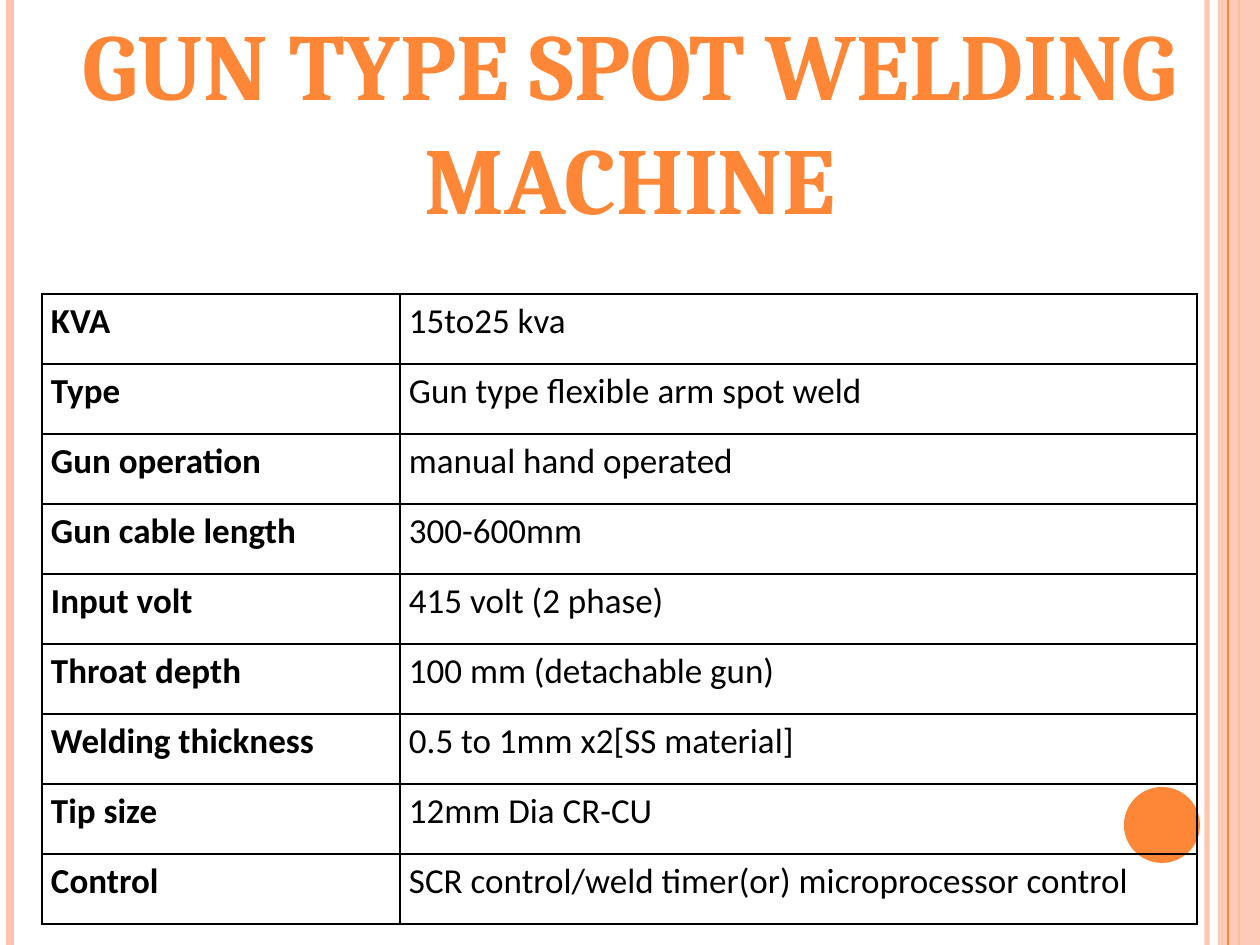
from dataclasses import dataclass

from lxml import etree
from pptx import Presentation
from pptx import util as u
from pptx.dml.color import RGBColor
from pptx.enum import shapes, text
from pptx.oxml import ns

PX = 914400 / 126


@dataclass(frozen=True)
class Theme:
    orange: str = "FE8637"
    peach: str = "FEC3AE"
    black: str = "000000"
    title_font: str = "Cambria"
    title_size: int = 54
    table_font: str = "Calibri"
    table_size: int = 20


theme = Theme()


def px(length):
    return u.Emu(round(length * PX))


def set_alpha(fill_parent, percent):
    """Make the solid colour inside an element partly transparent."""
    color = fill_parent.find(".//" + ns.qn("a:srgbClr"))
    etree.SubElement(color, ns.qn("a:alpha"), val=str(percent * 1000))


deck = Presentation()
deck.slide_width, deck.slide_height = px(1260), px(945)
page = deck.slides.add_slide(deck.slide_layouts[6])

# Vertical stripes and the band on the right edge, from back to front
stripes = [
    (1207, theme.peach, 3, 93),
    (10, theme.peach, 4.5, 100),
    (1239, theme.orange, 1.5, 100),
    ("band", theme.peach, 0, 87),
    (1228, theme.orange, 0.75, 100),
]
for x, color, width, opacity in stripes:
    if x == "band":
        band = page.shapes.add_shape(
            shapes.MSO_SHAPE.RECTANGLE, px(1218), 0, px(42), px(945))
        band.shadow.inherit = False
        band.fill.solid()
        band.fill.fore_color.rgb = RGBColor.from_string(color)
        band.line.fill.background()
        set_alpha(band._element.spPr, opacity)
        continue
    stripe = page.shapes.add_connector(
        shapes.MSO_CONNECTOR.STRAIGHT, px(x), 0, px(x), px(945))
    stripe.line.color.rgb = RGBColor.from_string(color)
    stripe.line.width = u.Pt(width)
    etree.SubElement(stripe._element.spPr, ns.qn("a:effectLst"))
    if opacity < 100:
        set_alpha(stripe._element.spPr, opacity)

dot = page.shapes.add_shape(
    shapes.MSO_SHAPE.OVAL, px(1124), px(787), px(76), px(76))
dot.shadow.inherit = False
dot.fill.solid()
dot.fill.fore_color.rgb = RGBColor.from_string(theme.orange)
dot.line.fill.background()

# Title
title = page.shapes.add_textbox(0, 0, px(1260), px(242)).text_frame
title.word_wrap = True
title.auto_size = text.MSO_AUTO_SIZE.SHAPE_TO_FIT_TEXT
para = title.paragraphs[0]
para.text = "GUN TYPE SPOT WELDING MACHINE"
para.alignment = text.PP_ALIGN.CENTER
para.font.name = theme.title_font
para.font.size = u.Pt(theme.title_size)
para.font.bold = True
para.font.color.rgb = RGBColor.from_string(theme.orange)

# Specification table
specs = [
    ("KVA", "15to25 kva"),
    ("Type", "Gun type flexible arm spot weld"),
    ("Gun operation", "manual hand operated"),
    ("Gun cable length", "300-600mm"),
    ("Input volt", "415 volt (2 phase)"),
    ("Throat depth", "100 mm (detachable gun)"),
    ("Welding thickness", "0.5 to 1mm x2[SS material]"),
    ("Tip size", "12mm Dia CR-CU"),
    ("Control", "SCR control/weld timer(or) microprocessor control"),
]
table = page.shapes.add_table(
    len(specs), 2, px(42), px(294), px(1155), px(630)).table
table.first_row = table.horz_banding = False
table.columns[0].width, table.columns[1].width = px(358), px(797)

for r, spec in enumerate(specs):
    for c, words in enumerate(spec):
        cell = table.cell(r, c)
        cell.margin_left = cell.margin_right = px(9)
        cell.margin_top = cell.margin_bottom = 0
        props = cell._tc.get_or_add_tcPr()
        for side in ("lnL", "lnR", "lnT", "lnB"):
            border = etree.SubElement(props, ns.qn(f"a:{side}"), w=str(u.Pt(1)))
            fill = etree.SubElement(border, ns.qn("a:solidFill"))
            etree.SubElement(fill, ns.qn("a:srgbClr"), val=theme.black)
        cell.fill.background()
        para = cell.text_frame.paragraphs[0]
        para.text = words
        para.line_spacing = 1.15
        para.font.name = theme.table_font
        para.font.size = u.Pt(theme.table_size)
        para.font.bold = c == 0
        para.font.color.rgb = RGBColor.from_string(theme.black)

deck.save("out.pptx")
